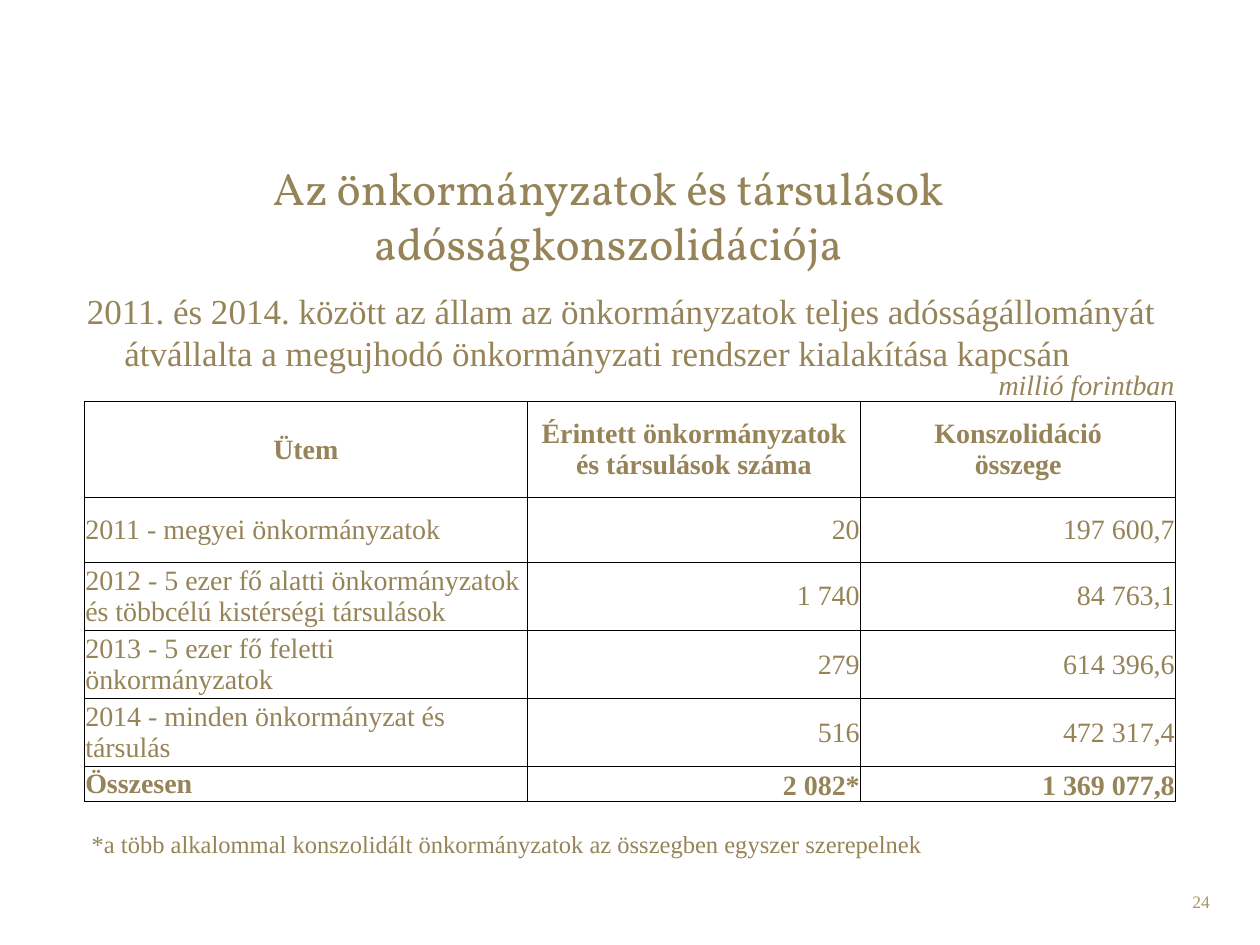
"""Build the slide on the debt consolidation of municipalities."""
from lxml.etree import SubElement
from pptx import Presentation
from pptx.dml.color import RGBColor
from pptx.enum.text import MSO_ANCHOR as Anchor, MSO_AUTO_SIZE as Auto, PP_ALIGN as Align
from pptx.oxml.ns import qn
from pptx.util import Cm, Pt

GOLD = RGBColor(0x96, 0x84, 0x58)
PALE = RGBColor(0xA6, 0x97, 0x65)
SERIF = "Times New Roman"

TITLE = "Az önkormányzatok és társulások adósságkonszolidációja"
LEAD = ("2011. és 2014. között az állam az önkormányzatok teljes adósságállományát "
        "átvállalta a megujhodó önkormányzati rendszer kialakítása kapcsán")
NOTE = "*a több alkalommal konszolidált önkormányzatok az összegben egyszer szerepelnek"
PAGE = "24"
ROWS = [
    ("", "", "millió forintban"),
    ("Ütem", "Érintett önkormányzatok és társulások száma", "Konszolidáció\nösszege"),
    ("2011 - megyei önkormányzatok", "20", "197 600,7"),
    ("2012 - 5 ezer fő alatti önkormányzatok és többcélú kistérségi társulások",
     "1 740", "84 763,1"),
    ("2013 - 5 ezer fő feletti önkormányzatok", "279", "614 396,6"),
    ("2014 - minden önkormányzat és társulás", "516", "472 317,4"),
    ("Összesen", "2 082*", "1 369 077,8"),
]
WIDTHS = [8.93, 6.72, 6.35]
HEIGHTS = [0.69, 1.93, 1.31, 1.37, 1.37, 1.37, 0.69]
UNIT, HEAD, TOTAL = 0, 1, len(ROWS) - 1


def style(para, size, color=GOLD, name=SERIF, align=Align.LEFT, bold=False, italic=False):
    para.alignment = align
    font = para.font
    font.size, font.name, font.bold, font.italic = Pt(size), name, bold, italic
    font.color.rgb = color


def add_text(slide, text, box, size, **look):
    frame = slide.shapes.add_textbox(*map(Cm, box)).text_frame
    frame.word_wrap = True
    frame.text = text
    style(frame.paragraphs[0], size, **look)
    return frame.paragraphs[0]


def add_line(cell, side, shown):
    line = SubElement(cell._tc.get_or_add_tcPr(), qn(f"a:ln{side}"), w=str(Pt(0.5)))
    if shown:
        fill = SubElement(line, qn("a:solidFill"))
        SubElement(fill, qn("a:srgbClr"), val="000000")
    else:
        SubElement(line, qn("a:noFill"))


def fill_cell(cell, text, row, col):
    cell.text = text
    cell.margin_left = cell.margin_right = cell.margin_top = Cm(0.02)
    cell.margin_bottom = 0
    low = row == UNIT or (row == TOTAL and col > 0)
    cell.vertical_anchor = Anchor.BOTTOM if low else Anchor.MIDDLE
    align = Align.CENTER if row == HEAD else Align.RIGHT if col else Align.LEFT
    for para in cell.text_frame.paragraphs:
        style(para, 16, align=align, bold=row in (HEAD, TOTAL), italic=row == UNIT)
        if not text:
            SubElement(para._p, qn("a:endParaRPr"), sz="1600")
    for side in "LRTB":
        add_line(cell, side, row != UNIT or side == "B")
    cell.fill.background()


def add_grid(slide):
    box = map(Cm, (1.7, 7.39, sum(WIDTHS), sum(HEIGHTS)))
    grid = slide.shapes.add_table(len(ROWS), len(WIDTHS), *box).table
    grid.first_row = grid.horz_banding = False
    for col, width in zip(grid.columns, WIDTHS):
        col.width = Cm(width)
    for r, (texts, height) in enumerate(zip(ROWS, HEIGHTS)):
        grid.rows[r].height = Cm(height)
        for c, text in enumerate(texts):
            fill_cell(grid.cell(r, c), text, r, c)


def main():
    deck = Presentation()
    deck.slide_width, deck.slide_height = Cm(25.4), Cm(19.05)
    slide = deck.slides.add_slide(deck.slide_layouts[5])

    title = slide.shapes.title
    title.left, title.top, title.width, title.height = map(Cm, (0.84, 2.74, 22.86, 3.18))
    frame = title.text_frame
    frame.text = TITLE
    frame.auto_size = Auto.NONE
    frame.vertical_anchor = Anchor.MIDDLE
    style(frame.paragraphs[0], 26, name="Vollkorn", align=Align.CENTER)

    lead = add_text(slide, LEAD, (1.5, 5.72, 22.23, 1.96), 20)
    props = lead._p.get_or_add_pPr()
    props.set("marL", str(Cm(0.76)))
    props.set("indent", str(-Cm(0.76)))

    add_grid(slide)
    add_text(slide, NOTE, (1.6, 16.59, 22, 0.86), 14)
    add_text(slide, PAGE, (18.72, 17.83, 5.92, 1.02), 10, color=PALE, align=Align.RIGHT)
    deck.save("out.pptx")


if __name__ == "__main__":
    main()
